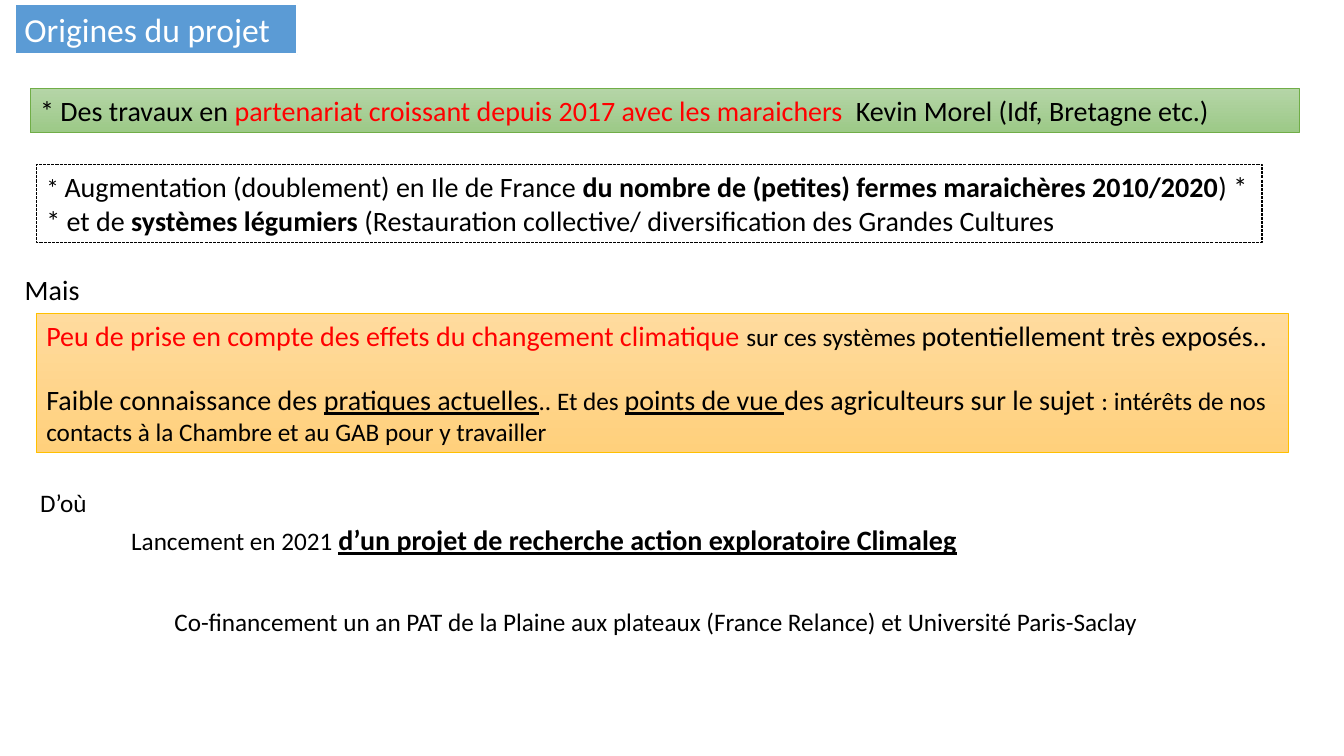
from pptx import Presentation
from pptx.dml.color import RGBColor as Rgb
from pptx.enum.dml import MSO_LINE as Dash
from pptx.enum.shapes import MSO_SHAPE as Shape
from pptx.enum.text import MSO_ANCHOR as Anchor, PP_ALIGN as Align
from pptx.util import Pt

HUES = {
    "black": "000000", "white": "FFFFFF", "red": "FF0000", "blue": "5B9BD5",
    "green": "70AD47", "leaf": "B5D5A7", "moss": "9CC987",
    "gold": "FFC000", "sand": "FFDB9E", "amber": "FFD07C",
}


def hue(name):
    return Rgb.from_string(HUES[name])


def add_run(para, text, size=20, color="black", bold=False, under=False):
    run = para.add_run()
    run.text = text
    font = run.font
    font.name = "Calibri"
    font.size = Pt(size)
    font.color.rgb = hue(color)
    font.bold = bold
    font.underline = under


def put_text(shape, paras, gap=0):
    frame = shape.text_frame
    frame.word_wrap = True
    frame.vertical_anchor = Anchor.TOP
    for i, runs in enumerate(paras):
        para = frame.add_paragraph() if i else frame.paragraphs[0]
        para.alignment = Align.LEFT
        if i:
            para.space_before = Pt(gap)
        for text, style in runs:
            add_run(para, text, **style)


def add_note(slide, area, *runs):
    put_text(slide.shapes.add_textbox(*map(Pt, area)), [runs])


def add_box(slide, area, paras, fill, line, width, gap=0, dash=None):
    box = slide.shapes.add_shape(Shape.RECTANGLE, *map(Pt, area))
    box.shadow.inherit = False
    if not fill:
        box.fill.background()
    elif len(fill) == 1:
        box.fill.solid()
        box.fill.fore_color.rgb = hue(fill[0])
    else:
        box.fill.gradient()
        box.fill.gradient_angle = 270
        for stop, name in zip(box.fill.gradient_stops, fill):
            stop.color.rgb = hue(name)
    box.line.color.rgb = hue(line)
    box.line.width = Pt(width)
    if dash:
        box.line.dash_style = dash
    put_text(box, paras, gap)


def main():
    deck = Presentation()
    deck.slide_width, deck.slide_height = Pt(960), Pt(540)
    slide = deck.slides.add_slide(deck.slide_layouts[6])
    plain, small = {}, {"size": 18}
    red, bold, under = {"color": "red"}, {"bold": True}, {"under": True}

    add_box(slide, (10.4, 2.8, 202, 36),
            [[("Origines du projet", {"size": 24, "color": "white"})]],
            ["blue"], "white", 1.5)
    add_box(slide, (21.6, 63.2, 906.5, 31.5), [[
        ("* Des travaux en ", plain),
        ("partenariat croissant depuis 2017 avec les maraichers ", red),
        (" Kevin Morel (Idf, Bretagne etc.)", plain),
    ]], ["leaf", "moss"], "green", 0.5)
    add_box(slide, (26, 117.5, 875.5, 55.7), [[
        ("* ", small),
        ("Augmentation (doublement) en Ile de France ", plain),
        ("du nombre de (petites) fermes maraichères 2010/2020", bold),
        (") * * et de ", plain),
        ("systèmes légumiers ", bold),
        ("(Restauration collective/ diversification des Grandes Cultures", plain),
    ]], [], "black", 0.75, dash=Dash.SQUARE_DOT)
    add_note(slide, (10.6, 191, 83.5, 31.5), ("Mais", plain))
    add_box(slide, (26, 224, 894.3, 99.3), [
        [
            ("Peu de prise en compte des effets du changement climatique ", red),
            ("sur ces systèmes ", small),
            ("potentiellement très exposés..", plain),
        ],
        [
            ("Faible connaissance des ", plain),
            ("pratiques actuelles", under),
            (".. Et des ", small),
            ("points de vue ", under),
            ("des agriculteurs sur le sujet ", plain),
            (": intérêts de nos contacts à la Chambre et au GAB pour y travailler",
             small),
        ],
    ], ["sand", "amber"], "gold", 0.5, gap=22)
    add_note(slide, (21.6, 344.2, 64, 29), ("D’où", small))
    add_note(slide, (86.6, 370, 763, 31.5),
             ("Lancement en 2021 ", small),
             ("d’un projet de recherche action exploratoire Climaleg",
              bold | under))
    add_note(slide, (117.5, 429.2, 792, 29),
             ("Co-financement un an PAT de la Plaine aux plateaux "
              "(France Relance) et Université Paris-Saclay", small))
    deck.save("out.pptx")


if __name__ == "__main__":
    main()
